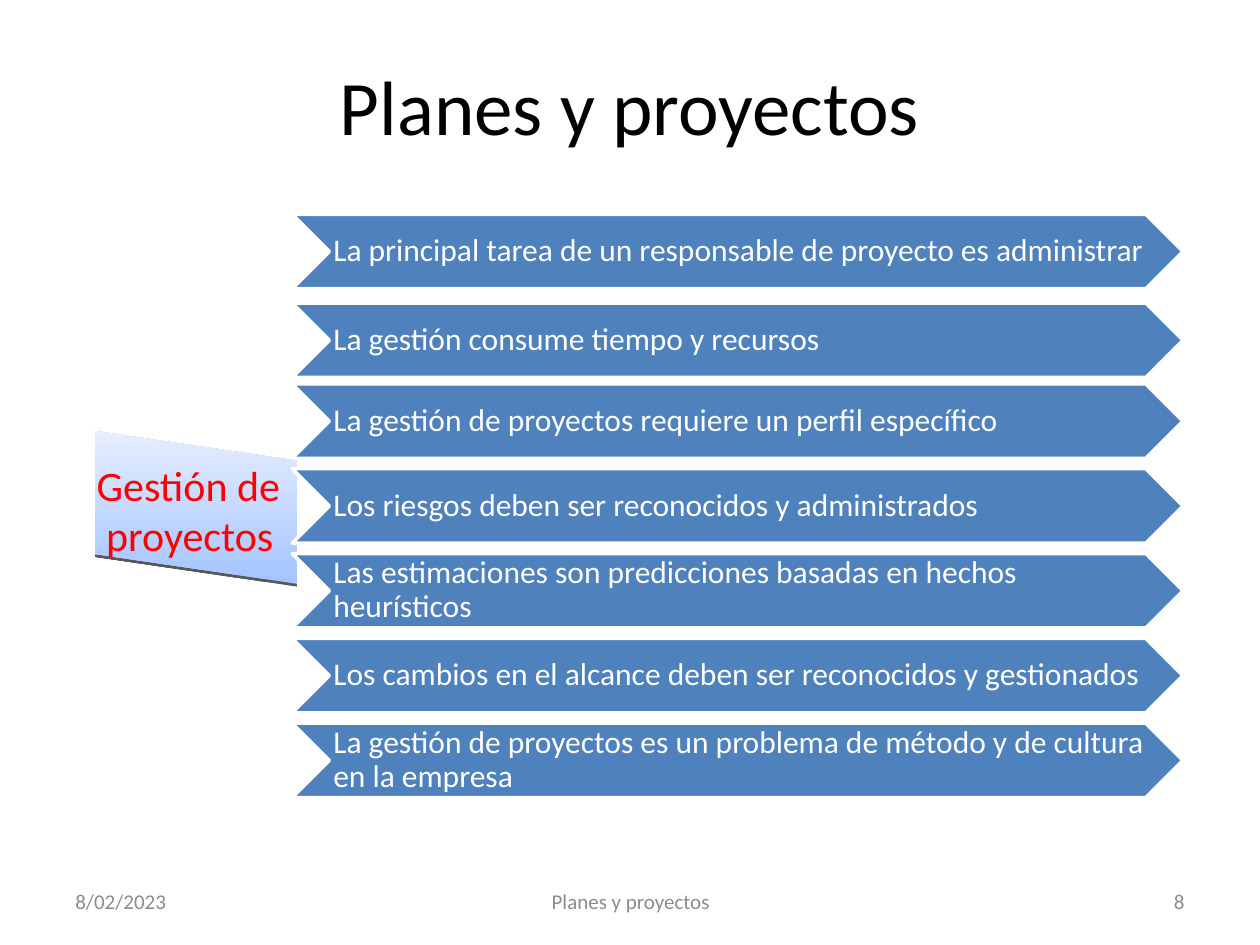
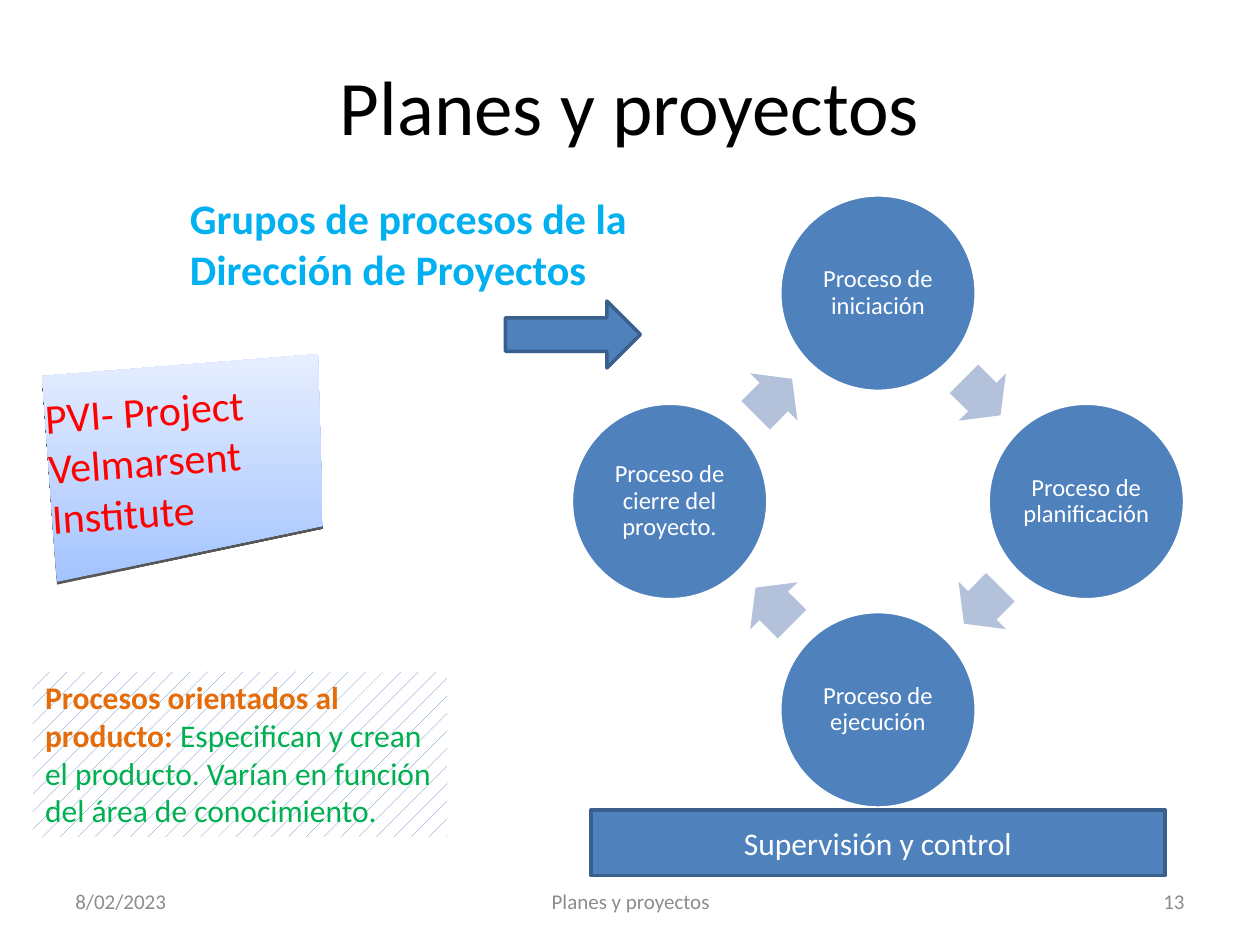
from math import cos, radians, sin

from lxml.etree import SubElement
from pptx import Presentation
from pptx.dml.color import RGBColor
from pptx.enum.dml import MSO_PATTERN
from pptx.enum.shapes import MSO_SHAPE as Preset
from pptx.enum.text import MSO_ANCHOR as Anchor, PP_ALIGN as Align
from pptx.oxml.ns import qn
from pptx.util import Cm, Pt

FONT = "Calibri"
TOPIC = "Planes y proyectos"
COLORS = {
    "black": "000000", "white": "FFFFFF", "footer": "8C8C8C",
    "blue": "4F81BD", "edge": "3A5F8C", "pale": "B3C1DB",
    "panel_low": "A4C4FF", "panel_high": "E6EEFF",
    "red": "FF0000", "sky": "00B0F0", "orange": "E46C0A", "green": "00B050",
}
GUIDELINES = [
    "La principal tarea de un responsable de proyecto es administrar",
    "La gestión consume tiempo y recursos",
    "La gestión de proyectos requiere un perfil específico",
    "Los riesgos deben ser reconocidos y administrados",
    "Las estimaciones son predicciones basadas en hechos heurísticos",
    "Los cambios en el alcance deben ser reconocidos y gestionados",
    "La gestión de proyectos es un problema de método y de cultura en la empresa",
]
PHASES = ["Proceso de iniciación", "Proceso de planificación",
          "Proceso de ejecución", "Proceso de cierre del proyecto."]

# Text formats: size, colour, and whatever differs from the defaults
TITLE = {"size": 44, "color": "black", "align": Align.CENTER}
FOOTER = {"size": 12, "color": "footer"}
PANEL = {"size": 24, "color": "red", "insets": (0, 0, 0, 0)}
GUIDELINE = {"size": 18, "color": "white", "spacing": 0.9,
             "insets": (0.08, 0.03, 0, 0.03)}
PHASE = {"size": 14, "color": "white", "spacing": 0.9, "align": Align.CENTER,
         "insets": (0.05, 0.05, 0.05, 0.05)}
CONTROL = {"size": 18, "color": "white", "align": Align.CENTER}
HEADING = {"size": 24, "color": "sky", "bold": True, "anchor": Anchor.TOP,
           "wrap": False}
PRODUCT = {"size": 18, "color": "green", "anchor": Anchor.TOP}


def rgb(name):
    return RGBColor.from_string(COLORS[name])


def box(*lengths):
    return [Cm(round(length, 2)) for length in lengths]


def write(shape, paragraphs, look):
    """Fill a shape with paragraphs, each a string or a list of (text, changes)."""
    frame = shape.text_frame
    frame_format = {
        "word_wrap": look.get("wrap", True),
        "vertical_anchor": look.get("anchor", Anchor.MIDDLE),
    }
    sides = ("margin_left", "margin_top", "margin_right", "margin_bottom")
    frame_format.update(zip(sides, box(*look.get("insets", (0.25, 0.13, 0.25, 0.13)))))
    for name, value in frame_format.items():
        setattr(frame, name, value)
    for index, content in enumerate(paragraphs):
        paragraph = frame.add_paragraph() if index else frame.paragraphs[0]
        paragraph.alignment = look.get("align", Align.LEFT)
        paragraph.line_spacing = look.get("spacing", 1.0)
        runs = [(content, {})] if isinstance(content, str) else content
        for words, changes in runs:
            style = {**look, **changes}
            run = paragraph.add_run()
            run.text = words
            run_format = {"name": FONT, "size": Pt(style["size"]),
                          "bold": style.get("bold", False)}
            for name, value in run_format.items():
                setattr(run.font, name, value)
            run.font.color.rgb = rgb(style["color"])
    return frame


def add_label(slide, place, paragraphs, look):
    label = slide.shapes.add_textbox(*box(*place))
    write(label, paragraphs, look)
    return label


def add_block(slide, preset, place, fill="blue", edge=None):
    block = slide.shapes.add_shape(preset, *box(*place))
    block.shadow.inherit = False
    block.fill.solid()
    block.fill.fore_color.rgb = rgb(fill)
    if edge:
        block.line.color.rgb = rgb(edge)
        block.line.width = Pt(2)
    else:
        block.line.fill.background()
    return block


def add_panel(slide, corners):
    """Slanted panel with a vertical gradient and a dark lower edge."""
    points = [tuple(box(*corner)) for corner in corners]
    builder = slide.shapes.build_freeform(*points[0])
    builder.add_line_segments(points[1:], close=True)
    panel = builder.convert_to_shape()
    panel.fill.gradient()
    panel.fill.gradient_angle = 90
    for stop, tone in zip(panel.fill.gradient_stops, ("panel_low", "panel_high")):
        stop.color.rgb = rgb(tone)
    panel.line.fill.background()
    panel.shadow.inherit = False
    effects = panel._element.spPr.find(qn("a:effectLst"))
    shadow = SubElement(effects, qn("a:outerShdw"), blurRad="0",
                        dist=str(Pt(1.6)), dir="5400000", rotWithShape="0")
    tone = SubElement(shadow, qn("a:srgbClr"), val=COLORS["black"])
    SubElement(tone, qn("a:alpha"), val="65000")


def add_page(deck, number):
    """Blank slide with the shared title and footer."""
    slide = deck.slides.add_slide(deck.slide_layouts[6])
    add_label(slide, (1.27, 0.53, 22.86, 3.18), [TOPIC], TITLE)
    for left, width, words, align in (
        (1.27, 5.92, "8/02/2023", Align.LEFT),
        (8.69, 8.05, TOPIC, Align.CENTER),
        (18.21, 5.92, str(number), Align.RIGHT),
    ):
        add_label(slide, (left, 17.65, width, 1.02), [words],
                  {**FOOTER, "align": align})
    return slide


def add_guidelines(slide):
    top, pitch = 4.32, 1.71
    for row, guideline in enumerate(GUIDELINES):
        nudge = 0.08 if row == 1 else 0
        chevron = add_block(slide, Preset.CHEVRON,
                            (5.89, top + row * pitch + nudge, 17.96, 1.5),
                            edge="white")
        write(chevron, [guideline], GUIDELINE)


def add_cycle(slide):
    """Phases on a ring, clockwise from the top, with arrows between them."""
    center_x, center_y, radius = 17.7, 10.11, 4.2
    diameter, arrow_width, arrow_height = 3.96, 1.04, 1.35
    arrow_radius = radius * cos(radians(45))
    for step, phase in enumerate(PHASES):
        angle = radians(90 * step - 90)
        left = center_x + radius * cos(angle) - diameter / 2
        top = center_y + radius * sin(angle) - diameter / 2
        circle = add_block(slide, Preset.OVAL, (left, top, diameter, diameter),
                           edge="white")
        write(circle, [phase], PHASE)

        angle += radians(45)
        left = center_x + arrow_radius * cos(angle) - arrow_width / 2
        top = center_y + arrow_radius * sin(angle) - arrow_height / 2
        arrow = add_block(slide, Preset.RIGHT_ARROW,
                          (left, top, arrow_width, arrow_height), fill="pale")
        arrow.adjustments[0] = 0.6
        arrow.rotation = 45 + 90 * step


def build_management(deck):
    slide = add_page(deck, 8)
    add_panel(slide, [(1.92, 8.69), (5.99, 9.29), (5.99, 11.77), (1.92, 11.17)])
    subject = add_label(slide, (1.95, 9.28, 4.04, 2),
                        ["Gestión de", "proyectos"], PANEL)
    second_line = subject.text_frame.paragraphs[1]
    second_line._p.get_or_add_pPr().set("marL", str(Cm(0.19)))
    add_guidelines(slide)


def build_processes(deck):
    slide = add_page(deck, 13)

    # Institute panel
    add_panel(slide, [(0.85, 7.58), (6.41, 7.14), (6.51, 10.6), (1.15, 11.73)])
    institute = add_label(slide, (0.97, 7.73, 5.6, 3),
                          ["PVI- Project Velmarsent", "Institute"], PANEL)
    institute.rotation = -4

    # Process groups
    add_cycle(slide)
    add_label(slide, (3.58, 3.76, 9.4, 2.31),
              ["Grupos de procesos de la", "Dirección de Proyectos"], HEADING)

    # Product note
    product = add_block(slide, Preset.RECTANGLE, (0.66, 13.54, 8.36, 3.33))
    product.fill.patterned()
    product.fill.pattern = MSO_PATTERN.PERCENT_5
    product.fill.fore_color.rgb = rgb("blue")
    product.fill.back_color.rgb = rgb("white")
    write(product, [[
        ("Procesos orientados al producto: ", {"color": "orange", "bold": True}),
        ("Especifican y crean el producto. Varían en función del área de "
         "conocimiento.", {}),
    ]], PRODUCT)

    # Control bar and pointer
    control = add_block(slide, Preset.RECTANGLE, (11.91, 16.33, 11.58, 1.32),
                        edge="edge")
    write(control, ["Supervisión y control"], CONTROL)
    add_block(slide, Preset.RIGHT_ARROW, (10.19, 6.07, 2.72, 1.35), edge="edge")


def main():
    deck = Presentation()
    deck.slide_width, deck.slide_height = Cm(25.4), Cm(19.05)
    build_management(deck)
    build_processes(deck)
    deck.save("out.pptx")


if __name__ == "__main__":
    main()
